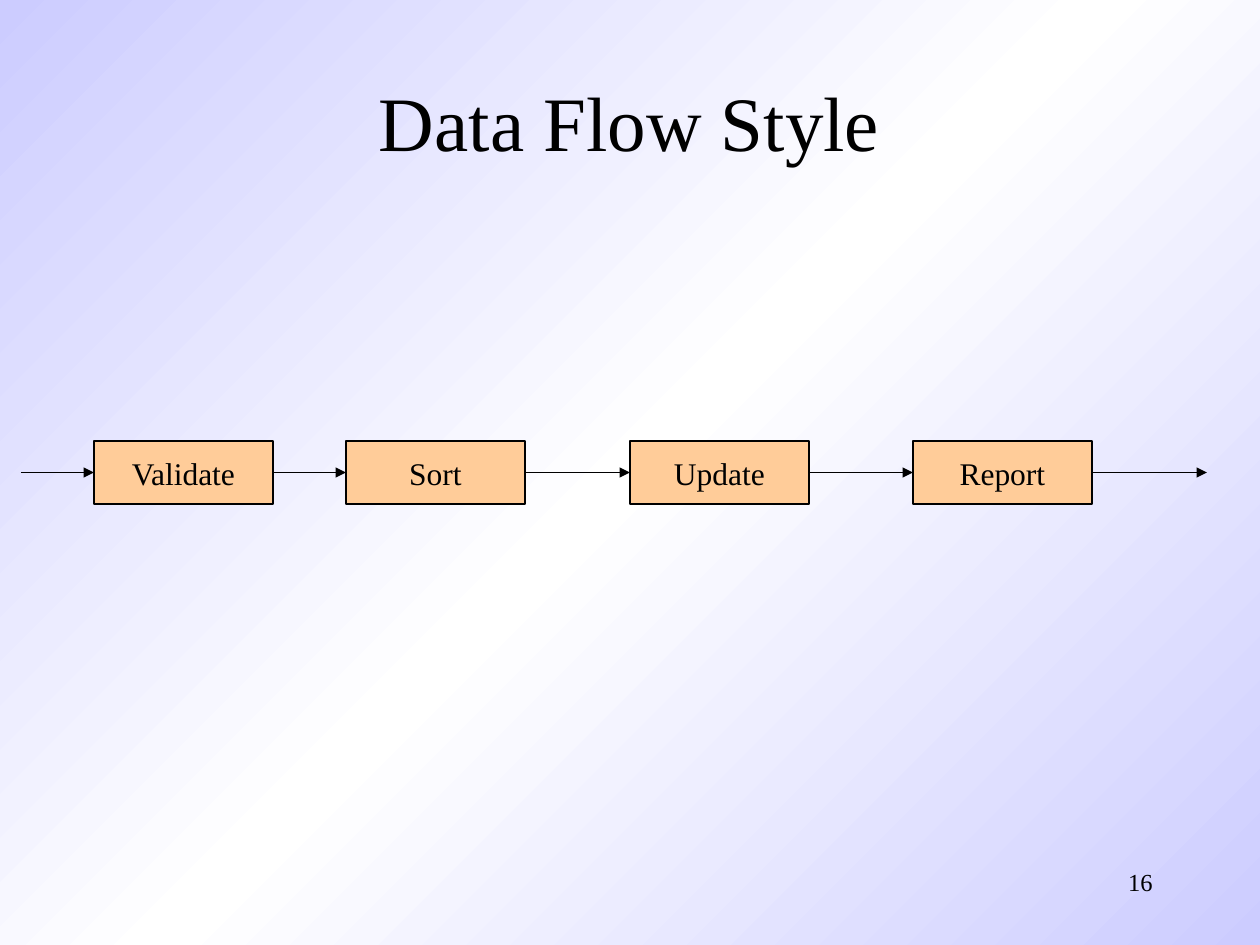
"""Build the Data Flow Style slide: four steps in a row joined by arrows."""
from copy import deepcopy

from pptx import Presentation
from pptx.dml.color import RGBColor
from pptx.enum.shapes import MSO_CONNECTOR, MSO_SHAPE
from pptx.enum.text import MSO_ANCHOR, PP_ALIGN
from pptx.oxml.ns import qn
from pptx.util import Emu, Pt
from lxml.etree import SubElement

BLACK = RGBColor(0x00, 0x00, 0x00)
PEACH = RGBColor(0xFF, 0xCC, 0x99)
LAVENDER = RGBColor(0xCC, 0xCC, 0xFF)
WHITE = RGBColor(0xFF, 0xFF, 0xFF)


def px(length):
    return Emu(round(length * 914400 / 126))


def write(shape, text, size, align, anchor, wrap):
    frame = shape.text_frame
    frame.word_wrap = wrap
    frame.vertical_anchor = anchor
    paragraph = frame.paragraphs[0]
    paragraph.alignment = align
    run = paragraph.add_run()
    run.text = text
    run.font.name = "Times New Roman"
    run.font.size = Pt(size)
    run.font.color.rgb = BLACK


prs = Presentation()
prs.slide_width, prs.slide_height = px(1260), px(945)
slide = prs.slides.add_slide(prs.slide_layouts[6])

backdrop = slide.background.fill
backdrop.gradient()
backdrop.gradient_angle = 315
first_stop = next(slide.element.iter(qn("a:gs")))
first_stop.addnext(deepcopy(first_stop))
for stop, position, color in zip(backdrop.gradient_stops, (0, 0.5, 1), (LAVENDER, WHITE, LAVENDER)):
    stop.position = position
    stop.color.rgb = color

page_number = slide.shapes.add_textbox(px(903), px(861), px(262), px(63))
write(page_number, "16", 14, PP_ALIGN.RIGHT, MSO_ANCHOR.TOP, True)
title = slide.shapes.add_textbox(px(94), px(42), px(1071), px(158))
write(title, "Data Flow Style", 44, PP_ALIGN.CENTER, MSO_ANCHOR.MIDDLE, True)

STEP_TOP, STEP_WIDTH, STEP_HEIGHT = 441, 179, 63
steps = {"Validate": 94, "Sort": 346, "Update": 630, "Report": 913}
for label, left in steps.items():
    step = slide.shapes.add_shape(
        MSO_SHAPE.RECTANGLE, px(left), px(STEP_TOP), px(STEP_WIDTH), px(STEP_HEIGHT))
    step.shadow.inherit = False
    step.fill.solid()
    step.fill.fore_color.rgb = PEACH
    step.line.color.rgb = BLACK
    step.line.width = Pt(0.75)
    write(step, label, 18, PP_ALIGN.CENTER, MSO_ANCHOR.MIDDLE, False)

flow_y = px(STEP_TOP + STEP_HEIGHT / 2)
flow_starts = [21] + [left + STEP_WIDTH for left in steps.values()]
flow_ends = [*steps.values(), 1207]
for start, end in zip(flow_starts, flow_ends):
    flow = slide.shapes.add_connector(MSO_CONNECTOR.STRAIGHT, px(start), flow_y, px(end), flow_y)
    flow.line.color.rgb = BLACK
    flow.line.width = Pt(0.75)
    SubElement(flow.line._get_or_add_ln(), qn("a:tailEnd"), type="triangle")
    SubElement(flow.element.spPr, qn("a:effectLst"))

prs.save("out.pptx")
